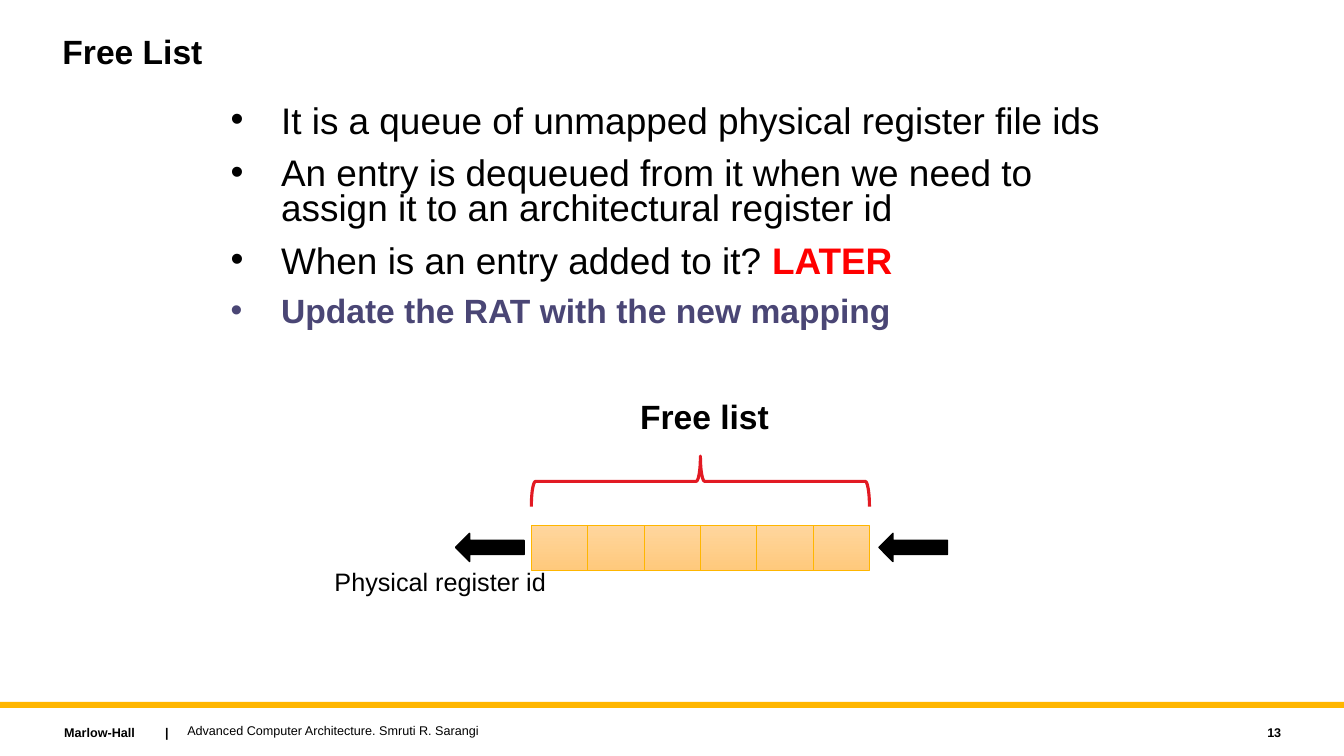
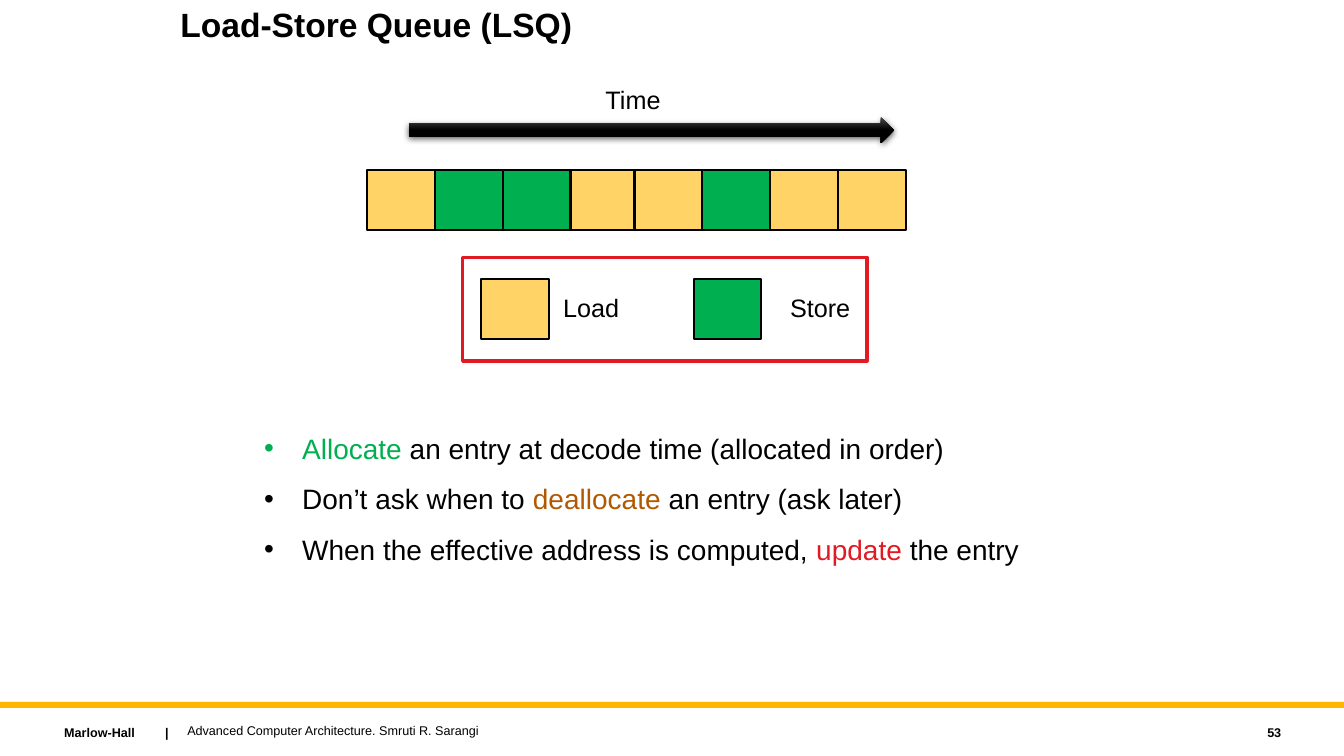
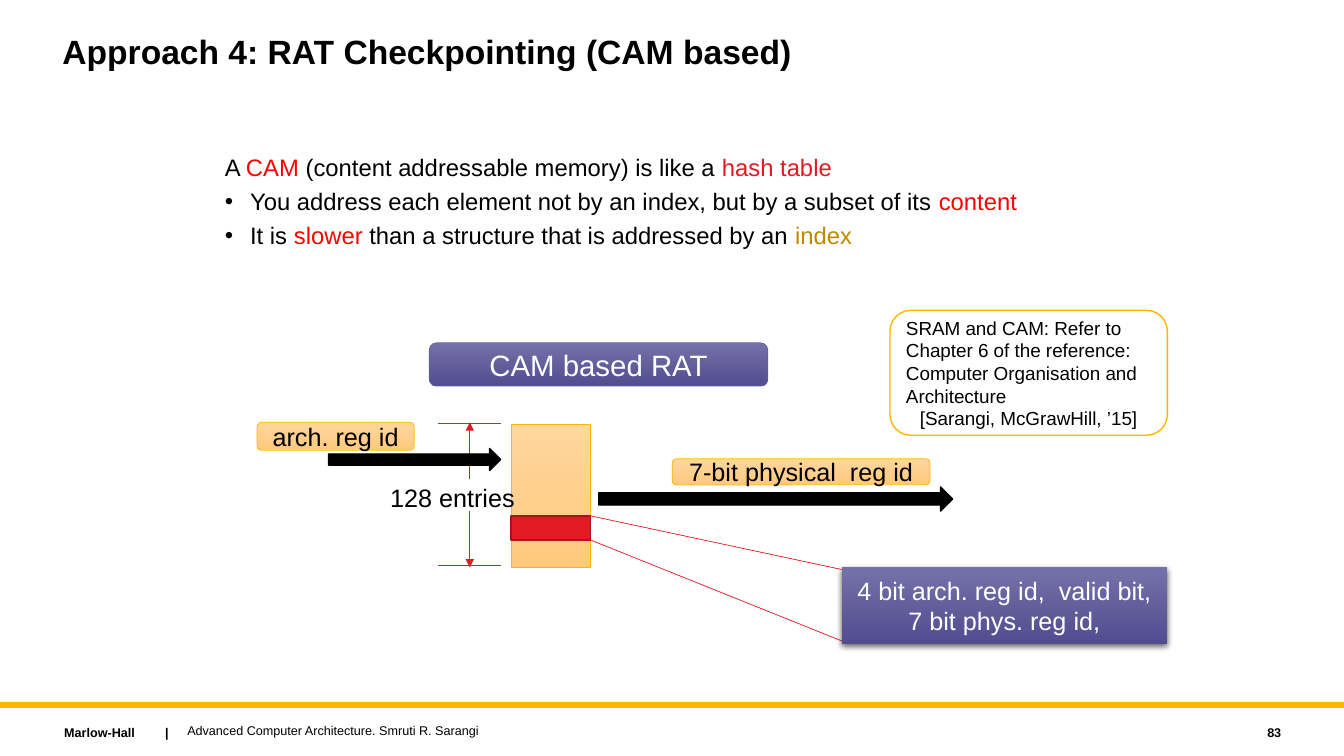
from lxml import etree
from pptx import Presentation
from pptx.dml.color import RGBColor
from pptx.enum.shapes import MSO_CONNECTOR, MSO_SHAPE
from pptx.enum.text import MSO_ANCHOR, MSO_AUTO_SIZE, PP_ALIGN
from pptx.oxml.ns import qn
from pptx.util import Cm, Pt

RECT, ROUNDED = MSO_SHAPE.RECTANGLE, MSO_SHAPE.ROUNDED_RECTANGLE
RIGHT_ARROW, LEFT_ARROW = MSO_SHAPE.RIGHT_ARROW, MSO_SHAPE.LEFT_ARROW
BRACE = MSO_SHAPE.LEFT_BRACE
STRAIGHT = MSO_CONNECTOR.STRAIGHT
TOP, MIDDLE = MSO_ANCHOR.TOP, MSO_ANCHOR.MIDDLE
LEFT, CENTER, RIGHT = PP_ALIGN.LEFT, PP_ALIGN.CENTER, PP_ALIGN.RIGHT
FIXED = MSO_AUTO_SIZE.NONE

FONT = "Arial"
BLACK = RGBColor(0x00, 0x00, 0x00)
WHITE = RGBColor(0xFF, 0xFF, 0xFF)
GOLD = RGBColor(0xFF, 0xB6, 0x00)
DARK_GOLD = RGBColor(0xBF, 0x88, 0x00)
BROWN = RGBColor(0xB1, 0x59, 0x00)
RED = RGBColor(0xE2, 0x1A, 0x23)
DARK_RED = RGBColor(0xA7, 0x13, 0x1A)
BRIGHT_RED = RGBColor(0xFF, 0x00, 0x00)
INDIGO = RGBColor(0x4A, 0x46, 0x75)
VIOLET = RGBColor(0x62, 0x5D, 0x9C)
LOAD = RGBColor(0xFF, 0xD3, 0x66)
STORE = RGBColor(0x00, 0xB0, 0x50)
# Gradients: top colour, bottom colour, where the bottom colour is reached
PEACH_FADE = (RGBColor(0xFF, 0xD6, 0x9E), RGBColor(0xFF, 0xC9, 0x7C), 1)
VIOLET_FADE = (RGBColor(0x75, 0x71, 0xA8), RGBColor(0x52, 0x4D, 0x90), 1)
BLACK_FADE = (RGBColor(0x4B, 0x4B, 0x4B), BLACK, 0.5)

# Content: a paragraph is a string or a list of runs;
# a run is a string or (text, format overrides).
PUBLISHER = "Marlow-Hall\t|"
BOOK = "Advanced Computer Architecture. Smruti R. Sarangi"

FREE_LIST_POINTS = [
    "It is a queue of unmapped physical register file ids",
    "An entry is dequeued from it when we need to assign it to an "
    "architectural register id",
    ["When is an entry added to it? ",
     ("LATER", {"color": BRIGHT_RED, "bold": True})],
    [("Update the RAT with the new mapping",
      {"color": INDIGO, "bold": True, "size": 24})],
]
FREE_LIST_ENTRIES = 6

LSQ_POINTS = [
    [("Allocate", {"color": STORE}),
     " an entry at decode time (allocated in order)"],
    ["Don’t ask when to ", ("deallocate ", {"color": BROWN}),
     "an entry (ask later)"],
    ["When the effective address is computed, ",
     ("update", {"color": RED}), " the entry"],
]
LSQ_ENTRIES = [LOAD, STORE, STORE, LOAD, LOAD, STORE, LOAD, LOAD]
# label, colour, swatch left, label left
LSQ_LEGEND = [("Load", LOAD, 12.12, 13.94), ("Store", STORE, 17.48, 19.66)]

CAM_INTRO = ["A ", ("CAM", {"color": BRIGHT_RED}),
             " (content addressable memory) is like a ",
             ("hash table", {"color": RED})]
CAM_POINTS = [
    ["You address each element not by an index, but by a subset of its ",
     ("content", {"color": BRIGHT_RED})],
    ["It is ", ("slower", {"color": BRIGHT_RED}),
     " than a structure that is addressed by an ",
     ("index", {"color": DARK_GOLD})],
]
REFERENCE = ("SRAM and CAM: Refer to Chapter 6 of the reference: "
             "Computer Organisation and Architecture")
CITATION = "[Sarangi, McGrawHill, ’15]"


def cm(*lengths):
    return [Cm(length) for length in lengths]


def write(frame, paragraphs, size=18, color=BLACK, bold=False, align=LEFT,
          anchor=TOP, wrap=True, line_spacing=1.0, before=0, hang=None,
          level=0, tab=None, extend=False):
    """Fill a text frame, or extend it; hang is the bullet indent in cm."""
    frame.word_wrap = wrap
    frame.auto_size = FIXED
    frame.vertical_anchor = anchor
    for number, runs in enumerate(paragraphs):
        first = number == 0 and not extend
        para = frame.paragraphs[0] if first else frame.add_paragraph()
        para.level = level
        para.alignment = align
        para.line_spacing = line_spacing
        para.space_before = Pt(0 if first else before)
        props = para._p.get_or_add_pPr()
        indent = Cm(hang or 0)
        props.set("marL", str(indent))
        props.set("indent", str(-indent))
        if hang:
            etree.SubElement(props, qn("a:buChar"), char="•")
        else:
            etree.SubElement(props, qn("a:buNone"))
        if tab:
            stops = etree.SubElement(props, qn("a:tabLst"))
            etree.SubElement(stops, qn("a:tab"), pos=str(Cm(tab)), algn="l")
        for part in [runs] if isinstance(runs, str) else runs:
            text, changes = (part, {}) if isinstance(part, str) else part
            look = {"size": size, "color": color, "bold": bold, **changes}
            run = para.add_run()
            run.text = text
            run.font.name = FONT
            run.font.size = Pt(look["size"])
            run.font.bold = look["bold"]
            run.font.color.rgb = look["color"]


def add_label(slide, box, text, **text_format):
    label = slide.shapes.add_textbox(*cm(*box))
    write(label.text_frame, [text], **text_format)
    return label


def add_block(slide, kind, box, fill=None, line=None, width=0.5,
              shadow=False):
    """Add a preset shape; fill is a colour, a fade tuple or None."""
    block = slide.shapes.add_shape(kind, *cm(*box))
    block.shadow.inherit = False
    if fill is None:
        block.fill.background()
    elif fill in (PEACH_FADE, VIOLET_FADE, BLACK_FADE):
        block.fill.gradient()
        block.fill.gradient_angle = 270
        start, end = block.fill.gradient_stops
        start.color.rgb, end.color.rgb, end.position = fill
    else:
        block.fill.solid()
        block.fill.fore_color.rgb = fill
    if line is None:
        block.line.fill.background()
    else:
        block.line.color.rgb = line
        block.line.width = Pt(width)
    if shadow:
        effects = block.element.spPr.find(qn("a:effectLst"))
        outer = etree.SubElement(
            effects, qn("a:outerShdw"), blurRad=str(Pt(4.5)),
            dist=str(Pt(1.5)), dir="5400000", rotWithShape="0")
        tint = etree.SubElement(outer, qn("a:srgbClr"), val=str(BLACK))
        etree.SubElement(tint, qn("a:alpha"), val="63000")
    return block


def add_line(slide, start, end, arrow=False):
    line = slide.shapes.add_connector(STRAIGHT, *cm(*start, *end))
    line.line.color.rgb = RED
    line.line.width = Pt(0.5)
    if arrow:
        etree.SubElement(line.line._get_or_add_ln(), qn("a:tailEnd"),
                         type="triangle")
    etree.SubElement(line.element.spPr, qn("a:effectLst"))


def place(shape, box):
    shape.left, shape.top, shape.width, shape.height = cm(*box)


def prepare_layout(layout, slide):
    """Give the layout the band and footer texts, built through a slide."""
    for holder in list(layout.placeholders)[2:]:
        holder.element.getparent().remove(holder.element)
    place(layout.placeholders[0], (1.32, 0.76, 25.4, 2.29))
    shared = [
        add_block(slide, RECT, (0, 17.69, 33.87, 0.15), GOLD),
        add_label(slide, (1.37, 18.14, 5.77, 0.63), PUBLISHER, size=9,
                  bold=True, tab=2.1),
        add_label(slide, (4.47, 18.08, 20.32, 0.63), BOOK, size=9,
                  anchor=MIDDLE),
    ]
    for part in shared:
        layout.shapes.element.append(part.element)


def add_slide(deck, title, number, body_box, title_box=None):
    """Add a slide with title and page number; return it and its body."""
    layout = deck.slide_layouts[1]
    slide = deck.slides.add_slide(layout)
    if len(deck.slides) == 1:
        prepare_layout(layout, slide)
    heading, body = slide.placeholders
    if title_box:
        place(heading, title_box)
    write(heading.text_frame, [title], size=24, bold=True, line_spacing=0.9)
    place(body, body_box)
    add_label(slide, (28.98, 18.14, 3.56, 0.63), str(number), size=9,
              bold=True, align=RIGHT, anchor=MIDDLE)
    return slide, body.text_frame


def build_free_list(deck):
    slide, body = add_slide(deck, "Free List", 13, (5.56, 2.54, 23.06, 6.98))
    write(body, FREE_LIST_POINTS, size=26.4, line_spacing=0.8, before=12,
          hang=1.27)
    left, top, width, height = 13.39, 13.23, 1.42, 1.14
    for entry in range(FREE_LIST_ENTRIES):
        add_block(slide, RECT, (left + entry * width, top, width, height),
                  PEACH_FADE, GOLD)
    for arrow_left in (11.48, 22.15):
        add_block(slide, LEFT_ARROW, (arrow_left, 13.44, 1.73, 0.71),
                  BLACK, BLACK, 1)
    add_label(slide, (8.18, 14.15, 5.89, 1.02), "Physical register id",
              wrap=False)
    span, depth = FREE_LIST_ENTRIES * width, 1.27
    brace = add_block(slide, BRACE,
                      (left + (span - depth) / 2, 12.13 - span / 2,
                       depth, span), line=RED, width=2.25)
    brace.rotation = 90
    add_label(slide, (15.88, 9.86, 6.38, 1.27), "Free list", size=24,
              bold=True)


def build_load_store_queue(deck):
    slide, body = add_slide(deck, "Load-Store Queue (LSQ)", 53,
                            (6.4, 10.74, 22.15, 7.14),
                            (4.29, 0.08, 19.05, 2.29))
    write(body, LSQ_POINTS, size=20, before=12, hang=0.96)
    left, width, height, overlap = 9.25, 1.71, 1.5, 0.1
    half = len(LSQ_ENTRIES) // 2
    for index, color in enumerate(LSQ_ENTRIES):
        shift = overlap if index >= half else 0
        add_block(slide, RECT,
                  (left + index * width - shift, 4.29, width, height),
                  color, BLACK, 1.5)
    add_block(slide, RIGHT_ARROW, (10.31, 2.95, 12.22, 0.66), BLACK_FADE,
              shadow=True)
    add_label(slide, (15.01, 2.01, 1.91, 1.02), "Time", wrap=False)
    add_block(slide, RECT, (11.66, 6.48, 10.19, 2.62), WHITE, RED, 2.25)
    for name, color, swatch_left, name_left in LSQ_LEGEND:
        add_block(slide, RECT, (swatch_left, 7.04, width, height),
                  color, BLACK, 1.5)
        add_label(slide, (name_left, 7.24, 2.54, 1.02), name)


def build_cam_checkpointing(deck):
    slide, body = add_slide(deck, "Approach 4: RAT Checkpointing (CAM based)",
                            83, (5.41, 3.86, 21.89, 2.69))
    write(body, [CAM_INTRO], size=17, line_spacing=0.8)
    write(body, CAM_POINTS, size=17, line_spacing=0.8, before=8, hang=0.64,
          level=1, extend=True)

    caption = add_block(slide, ROUNDED, (10.82, 8.64, 8.53, 1.09),
                        VIOLET_FADE, VIOLET)
    write(caption.text_frame, ["CAM based RAT"], size=21, color=WHITE,
          align=CENTER, anchor=MIDDLE)

    table_left, table_width = 12.88, 2.01
    add_block(slide, RECT, (table_left, 10.69, table_width, 3.61),
              PEACH_FADE, GOLD)
    for tick in (10.67, 14.25):
        add_line(slide, (11.05, tick), (12.62, tick))
    add_label(slide, (9.58, 12.04, 3.68, 1.02), "128 entries", wrap=False)
    for start, end in ((12.06, 10.64), (12.88, 14.3)):
        add_line(slide, (11.84, start), (11.84, end), arrow=True)

    for box in ((8.28, 11.3, 4.34, 0.56), (15.09, 12.27, 8.92, 0.61)):
        add_block(slide, RIGHT_ARROW, box, BLACK, BLACK, 1)
    for text, box in (("arch. reg id", (6.48, 10.64, 3.96, 0.71)),
                      ("7-bit physical  reg id", (16.94, 11.56, 6.5, 0.66))):
        tag = add_block(slide, ROUNDED, box, PEACH_FADE, GOLD)
        write(tag.text_frame, [text], align=CENTER, anchor=MIDDLE)

    entry_top, entry_height = 13, 0.61
    add_block(slide, RECT, (table_left, entry_top, table_width, entry_height),
              RED, DARK_RED, 1)
    table_right, detail_left = table_left + table_width, 21.21
    add_line(slide, (table_right, entry_top), (detail_left, 14.35))
    add_line(slide, (table_right, entry_top + entry_height),
             (detail_left, 16.15))
    detail = add_block(slide, RECT, (detail_left, 14.3, 8.2, 1.93),
                       VIOLET_FADE, shadow=True)
    write(detail.text_frame,
          ["4 bit arch. reg id,  valid bit, 7 bit phys. reg id,"],
          color=WHITE, align=CENTER, anchor=MIDDLE)

    note = add_block(slide, ROUNDED, (22.43, 7.82, 6.99, 3.15), WHITE, GOLD, 1)
    write(note.text_frame, [REFERENCE], size=13.5, anchor=MIDDLE)
    write(note.text_frame, [CITATION], size=13.5, anchor=MIDDLE,
          align=CENTER, extend=True)


def main():
    deck = Presentation()
    deck.slide_width, deck.slide_height = cm(33.87, 19.05)
    build_free_list(deck)
    build_load_store_queue(deck)
    build_cam_checkpointing(deck)
    deck.save("out.pptx")


if __name__ == "__main__":
    main()
